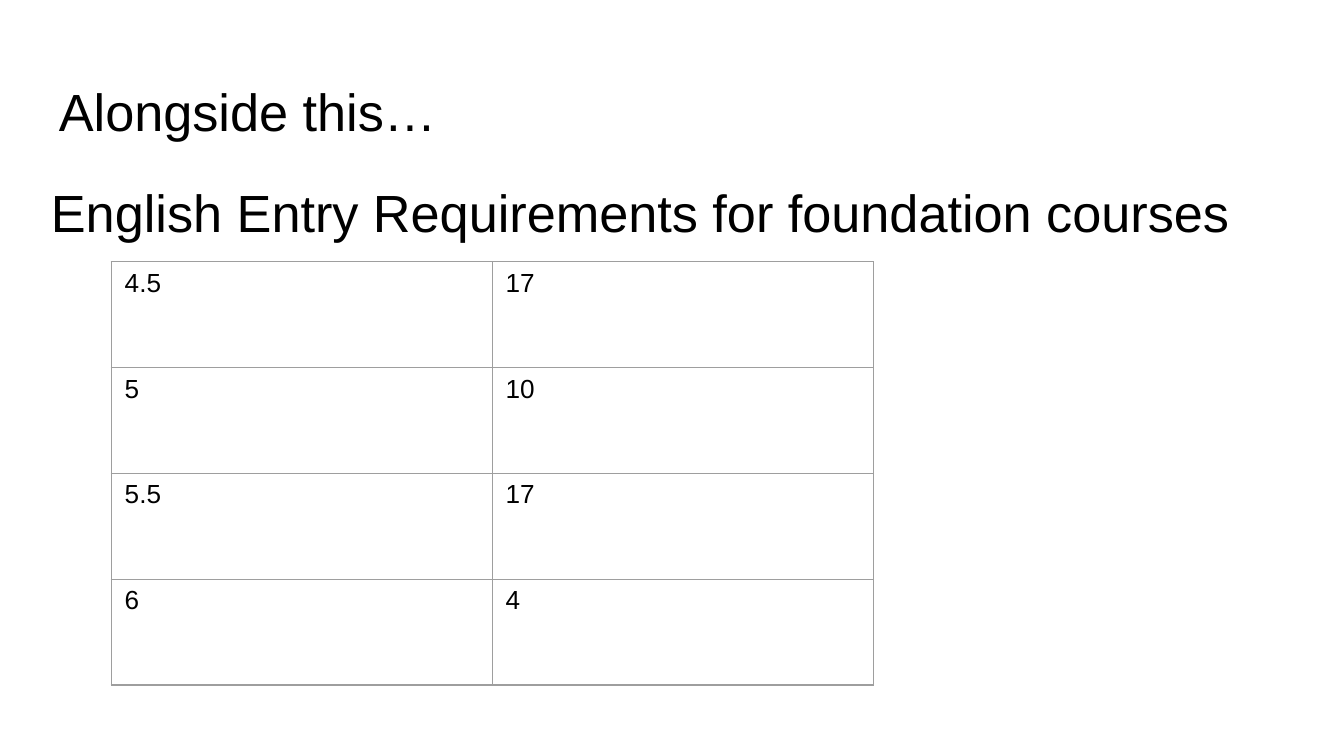
from lxml import etree
from pptx import Presentation
from pptx.dml.color import RGBColor
from pptx.oxml import ns
from pptx.util import Pt

COLORS = {"text": "000000", "border": "9E9E9E"}
FONT = "Arial"
ENTRY_SCORES = [("4.5", "17"), ("5", "10"), ("5.5", "17"), ("6", "4")]


def set_font(paragraph, size):
    font = paragraph.runs[0].font
    font.name = FONT
    font.size = Pt(size)
    font.color.rgb = RGBColor.from_string(COLORS["text"])


def add_heading(slide, wording, left, top, width, height):
    frame = slide.shapes.add_textbox(Pt(left), Pt(top), Pt(width), Pt(height)).text_frame
    frame.word_wrap = True
    frame.margin_left = frame.margin_right = Pt(7.2)
    frame.margin_top = frame.margin_bottom = Pt(7.2)
    frame.text = wording
    set_font(frame.paragraphs[0], 28)


def set_borders(cell):
    """Draw a thin line on all four sides; borders must precede the cell fill."""
    properties = cell._tc.get_or_add_tcPr()
    for position, side in enumerate(("lnL", "lnR", "lnT", "lnB")):
        line = etree.Element(ns.qn(f"a:{side}"), w=str(Pt(0.75)))
        fill = etree.SubElement(line, ns.qn("a:solidFill"))
        etree.SubElement(fill, ns.qn("a:srgbClr"), val=COLORS["border"])
        properties.insert(position, line)


def add_score_table(slide, scores, left, top, column_width, row_height):
    rows, columns = len(scores), len(scores[0])
    table = slide.shapes.add_table(
        rows, columns, Pt(left), Pt(top),
        Pt(column_width * columns), Pt(row_height * rows),
    ).table
    table.first_row = table.horz_banding = False
    for row, values in enumerate(scores):
        for column, value in enumerate(values):
            cell = table.cell(row, column)
            cell.text = value
            set_font(cell.text_frame.paragraphs[0], 14)
            cell.fill.background()
            set_borders(cell)


def main():
    deck = Presentation()
    deck.slide_width, deck.slide_height = Pt(720), Pt(405)
    slide = deck.slides.add_slide(deck.slide_layouts[6])
    add_heading(slide, "Alongside this…", 24.5, 35.3, 671, 45.4)
    add_heading(slide, "English Entry Requirements for foundation courses",
                20.2, 89.3, 671, 269.3)
    add_score_table(slide, ENTRY_SCORES, 59.6, 140.2, 204.1, 56.7)
    deck.save("out.pptx")


if __name__ == "__main__":
    main()
